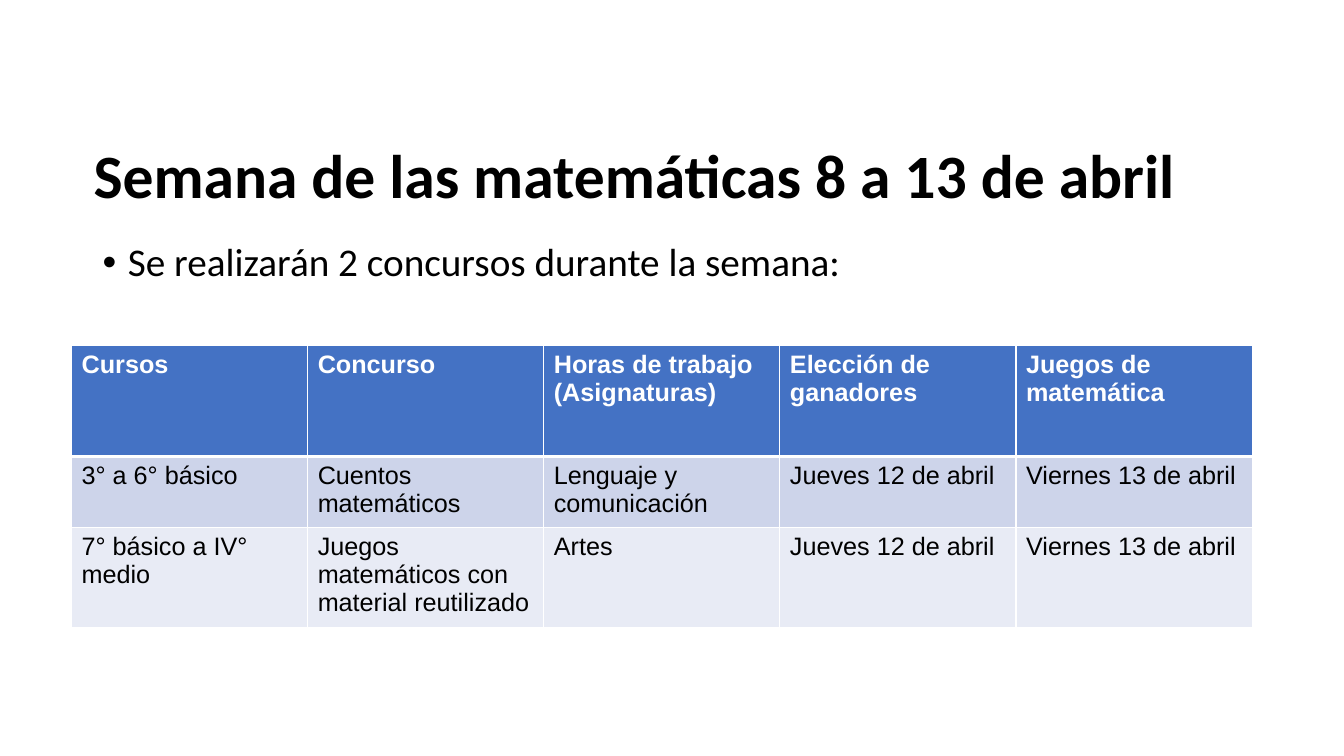
from lxml.etree import SubElement
from pptx import Presentation
from pptx.dml.color import RGBColor
from pptx.enum.text import MSO_ANCHOR
from pptx.oxml.ns import qn
from pptx.util import Inches, Pt

HEADER = ["Cursos", "Concurso", "Horas de trabajo\n(Asignaturas)",
          "Elección de ganadores", "Juegos de matemática"]
DAYS = ["Jueves 12 de abril", "Viernes 13 de abril"]
ROWS = [
    HEADER,
    ["3° a 6° básico", "Cuentos matemáticos", "Lenguaje y comunicación", *DAYS],
    ["7° básico a IV° medio", "Juegos matemáticos con material reutilizado", "Artes", *DAYS],
]
ROW_HEIGHTS = [1.1, 0.64, 0.94]
ROW_FILLS = ["4472C4", "CDD4EA", "E8EBF5"]


def color(value):
    """Turn a hex string into a colour."""
    return RGBColor.from_string(value)


def style_font(font, hex_color, **values):
    """Apply a colour and a dict of format values to a font."""
    font.color.rgb = color(hex_color)
    for name, value in values.items():
        setattr(font, name, value)


def add_text(slide, box, text, anchor, bullet=False, **font_values):
    """Place one paragraph of Calibri text in the box."""
    frame = slide.shapes.add_textbox(*map(Inches, box)).text_frame
    frame.word_wrap = True
    frame.vertical_anchor = anchor
    paragraph = frame.paragraphs[0]
    paragraph.text = text
    paragraph.line_spacing = 0.9
    if bullet:
        properties = paragraph._p.get_or_add_pPr()
        properties.set("marL", str(Inches(0.25)))
        properties.set("indent", str(-Inches(0.25)))
        SubElement(properties, qn("a:buFont"), typeface="Arial")
        SubElement(properties, qn("a:buChar"), char="•")
    style_font(paragraph.runs[0].font, "000000", name="Calibri", **font_values)


def add_borders(cell, widths):
    """Draw white borders on a cell, with a width in points for each side."""
    properties = cell._tc.get_or_add_tcPr()
    for position, (side, width) in enumerate(widths.items()):
        line = properties.makeelement(qn(f"a:ln{side}"), {"w": str(Pt(width))})
        fill = SubElement(line, qn("a:solidFill"))
        SubElement(fill, qn("a:srgbClr"), val="FFFFFF")
        properties.insert(position, line)


def add_schedule(slide, box):
    """Fill the box with the table of contests."""
    shape = slide.shapes.add_table(len(ROWS), len(HEADER), *map(Inches, box))
    table = shape.table
    for column in table.columns:
        column.width = Inches(box[2] / len(HEADER))
    for index, (texts, height, fill) in enumerate(zip(ROWS, ROW_HEIGHTS, ROW_FILLS)):
        is_header = index == 0
        table.rows[index].height = Inches(height)
        for cell, text in zip(table.rows[index].cells, texts):
            cell.text = text
            cell.fill.solid()
            cell.fill.fore_color.rgb = color(fill)
            add_borders(cell, {"L": 1, "R": 1, "T": 3 if index == 1 else 1,
                               "B": 3 if is_header else 1})
            for paragraph in cell.text_frame.paragraphs:
                style_font(paragraph.runs[0].font, "FFFFFF" if is_header else "000000",
                           name="Arial", size=Pt(18), bold=is_header)


def main():
    """Build and save the slide."""
    presentation = Presentation()
    presentation.slide_width = Inches(13.33)
    presentation.slide_height = Inches(7.5)
    slide = presentation.slides.add_slide(presentation.slide_layouts[6])
    add_text(slide, (0.83, 1.05, 11.5, 1.45), "Semana de las matemáticas 8 a 13 de abril",
             MSO_ANCHOR.MIDDLE, size=Pt(44), bold=True)
    add_text(slide, (0.92, 2.36, 11.5, 0.7), "Se realizarán 2 concursos durante la semana:",
             MSO_ANCHOR.TOP, bullet=True, size=Pt(28))
    add_schedule(slide, (0.71, 3.43, 11.71, sum(ROW_HEIGHTS)))
    presentation.save("out.pptx")


if __name__ == "__main__":
    main()
